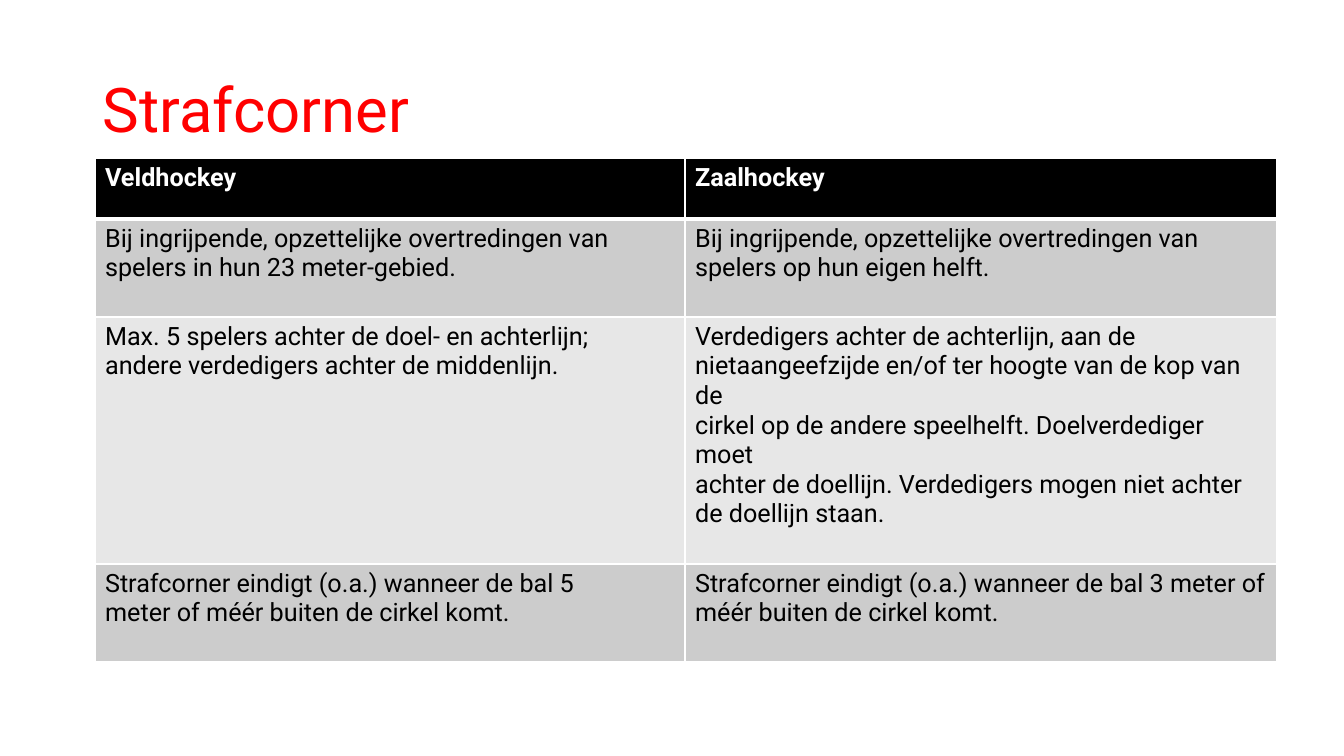
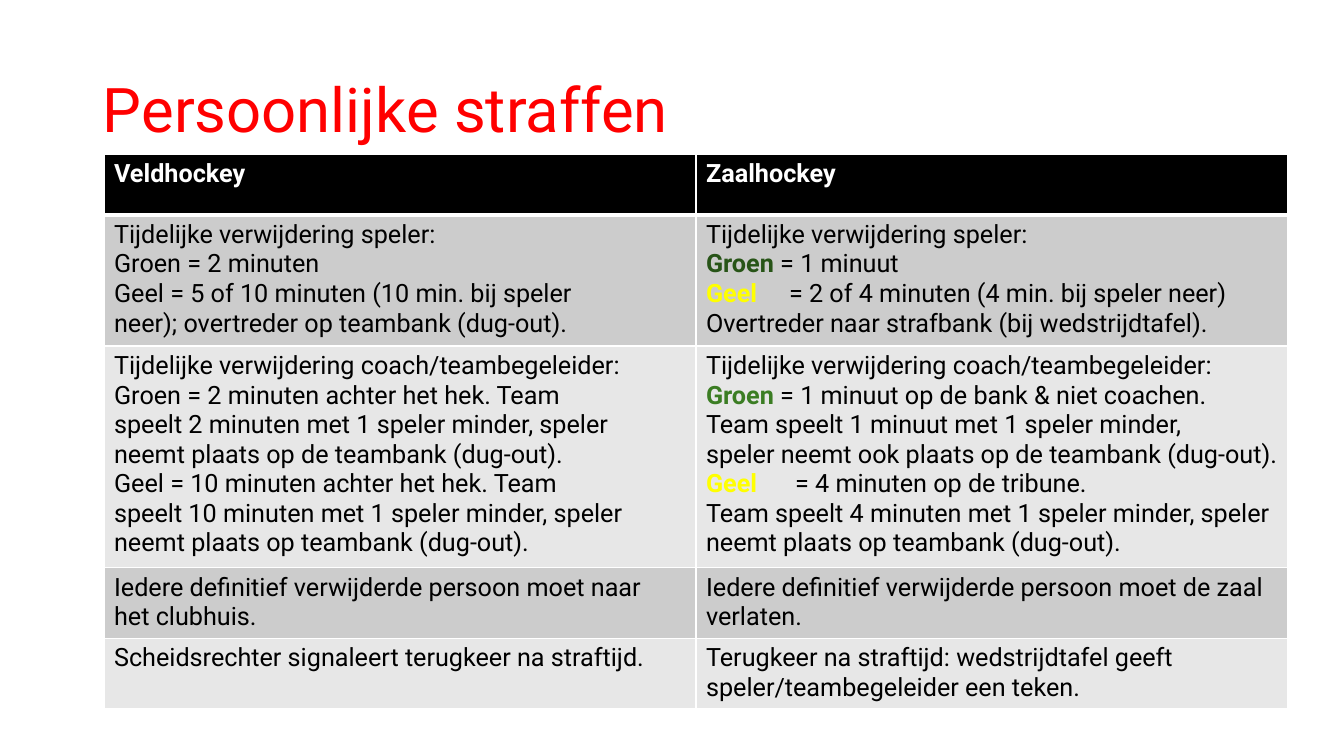
from lxml import etree
from pptx import Presentation
from pptx.dml.color import RGBColor
from pptx.enum.text import MSO_ANCHOR
from pptx.oxml.ns import qn
from pptx.util import Emu, Pt

MIDDLE = MSO_ANCHOR.MIDDLE
EMU_PER_PX = 914400 / 100.8
FONT = "Roboto"
COLOURS = {
    "title": "FF0000",
    "header": "000000",
    "odd": "CCCCCC",
    "even": "E7E7E7",
    "text": "000000",
    "light": "FFFFFF",
    "dark_green": "275417",
    "green": "3B7D23",
    "yellow": "FFFF00",
}
TITLE_BOX = (93, 40, 1159, 146)
HEADINGS = ("Veldhockey", "Zaalhockey")


def px(length):
    return Emu(round(length * EMU_PER_PX))


def colour(name):
    return RGBColor.from_string(COLOURS[name])


def add_run(paragraph, text, size, colour_name, bold=False):
    run = paragraph.add_run()
    run.text = text
    run.font.name = FONT
    run.font.size = Pt(size)
    run.font.bold = bold
    run.font.color.rgb = colour(colour_name)


def add_title(slide, text, box):
    frame = slide.shapes.add_textbox(*map(px, box)).text_frame
    frame.word_wrap = True
    frame.vertical_anchor = MIDDLE
    paragraph = frame.paragraphs[0]
    paragraph.line_spacing = 0.9
    add_run(paragraph, text, 44, "title")


def set_borders(cell, top, bottom):
    """White cell borders; widths in points."""
    properties = cell._tc.get_or_add_tcPr()
    for side, width in (("L", 1), ("R", 1), ("T", top), ("B", bottom)):
        line = etree.SubElement(properties, qn(f"a:ln{side}"), w=str(Pt(width)))
        fill = etree.SubElement(line, qn("a:solidFill"))
        etree.SubElement(fill, qn("a:srgbClr"), val=COLOURS["light"])


def add_tab_stop(paragraph, position):
    stops = etree.SubElement(paragraph._p.get_or_add_pPr(), qn("a:tabLst"))
    etree.SubElement(stops, qn("a:tab"), pos=str(px(position)), algn="l")


def fill_cell(cell, lines, row):
    """Each line is a string, or (card, card colour, rest, tab stop or None)."""
    header = row == 0
    set_borders(cell, top=3 if row == 1 else 1, bottom=3 if header else 1)
    cell.fill.solid()
    cell.fill.fore_color.rgb = colour("header" if header else "odd" if row % 2 else "even")
    frame = cell.text_frame
    for index, line in enumerate(lines):
        paragraph = frame.add_paragraph() if index else frame.paragraphs[0]
        if isinstance(line, tuple):
            card, card_colour, line, tab = line
            add_run(paragraph, card, 18, card_colour, bold=True)
            if tab:
                add_tab_stop(paragraph, tab)
        add_run(paragraph, line, 18, "light" if header else "text", bold=header)


def add_comparison(slide, box, columns, heights, rows):
    left, top = box
    size = (sum(columns), sum(heights))
    table = slide.shapes.add_table(
        len(heights), len(columns), *map(px, (left, top, *size))).table
    for column, width in zip(table.columns, columns):
        column.width = px(width)
    header = [[heading] for heading in HEADINGS]
    for number, (height, cells) in enumerate(zip(heights, [header, *rows])):
        table.rows[number].height = px(height)
        for column, lines in enumerate(cells):
            fill_cell(table.cell(number, column), lines, number)


# Penalty corner: field hockey beside indoor hockey
CORNER_ROWS = [
    (["Bij ingrijpende, opzettelijke overtredingen van",
      "spelers in hun 23 meter-gebied."],
     ["Bij ingrijpende, opzettelijke overtredingen van",
      "spelers op hun eigen helft."]),
    (["Max. 5 spelers achter de doel- en achterlijn;",
      "andere verdedigers achter de middenlijn."],
     ["Verdedigers achter de achterlijn, aan de nietaangeefzijde en/of "
      "ter hoogte van de kop van de",
      "cirkel op de andere speelhelft. Doelverdediger moet",
      "achter de doellijn. Verdedigers mogen niet achter",
      "de doellijn staan."]),
    (["Strafcorner eindigt (o.a.) wanneer de bal 5",
      "meter of méér buiten de cirkel komt."],
     ["Strafcorner eindigt (o.a.) wanneer de bal 3 meter of",
      "méér buiten de cirkel komt."]),
]

# Personal penalties
PENALTY_ROWS = [
    (["Tijdelijke verwijdering speler:",
      "Groen = 2 minuten",
      "Geel = 5 of 10 minuten (10 min. bij speler",
      "neer); overtreder op teambank (dug-out)."],
     ["Tijdelijke verwijdering speler:",
      ("Groen", "dark_green", " = 1 minuut", None),
      ("Geel", "yellow", "\t= 2 of 4 minuten (4 min. bij speler neer)", 83),
      "Overtreder naar strafbank (bij wedstrijdtafel)."]),
    (["Tijdelijke verwijdering coach/teambegeleider:",
      "Groen = 2 minuten achter het hek. Team",
      "speelt 2 minuten met 1 speler minder, speler",
      "neemt plaats op de teambank (dug-out).",
      "Geel = 10 minuten achter het hek. Team",
      "speelt 10 minuten met 1 speler minder, speler",
      "neemt plaats op teambank (dug-out)."],
     ["Tijdelijke verwijdering coach/teambegeleider:",
      ("Groen", "green", " = 1 minuut op de bank & niet coachen.", None),
      "Team speelt 1 minuut met 1 speler minder,",
      "speler neemt ook plaats op de teambank (dug-out).",
      ("Geel", "yellow", "\t= 4 minuten op de tribune.", 89),
      "Team speelt 4 minuten met 1 speler minder, speler "
      "neemt plaats op teambank (dug-out)."]),
    (["Iedere definitief verwijderde persoon moet naar",
      "het clubhuis."],
     ["Iedere definitief verwijderde persoon moet de zaal",
      "verlaten."]),
    (["Scheidsrechter signaleert terugkeer na straftijd."],
     ["Terugkeer na straftijd: wedstrijdtafel geeft",
      "speler/teambegeleider een teken."]),
]

# Title, table corner, column widths, row heights, rows
SLIDES = [
    ("Strafcorner", (95, 158), (590, 592), (61, 98, 247, 98), CORNER_ROWS),
    ("Persoonlijke straffen", (104, 154), (592, 592), (61, 128, 218, 69, 69), PENALTY_ROWS),
]


def main():
    deck = Presentation()
    deck.slide_width, deck.slide_height = px(1344), px(756)
    blank = deck.slide_layouts[6]
    for title, *comparison in SLIDES:
        slide = deck.slides.add_slide(blank)
        add_title(slide, title, TITLE_BOX)
        add_comparison(slide, *comparison)
    deck.save("out.pptx")


if __name__ == "__main__":
    main()
